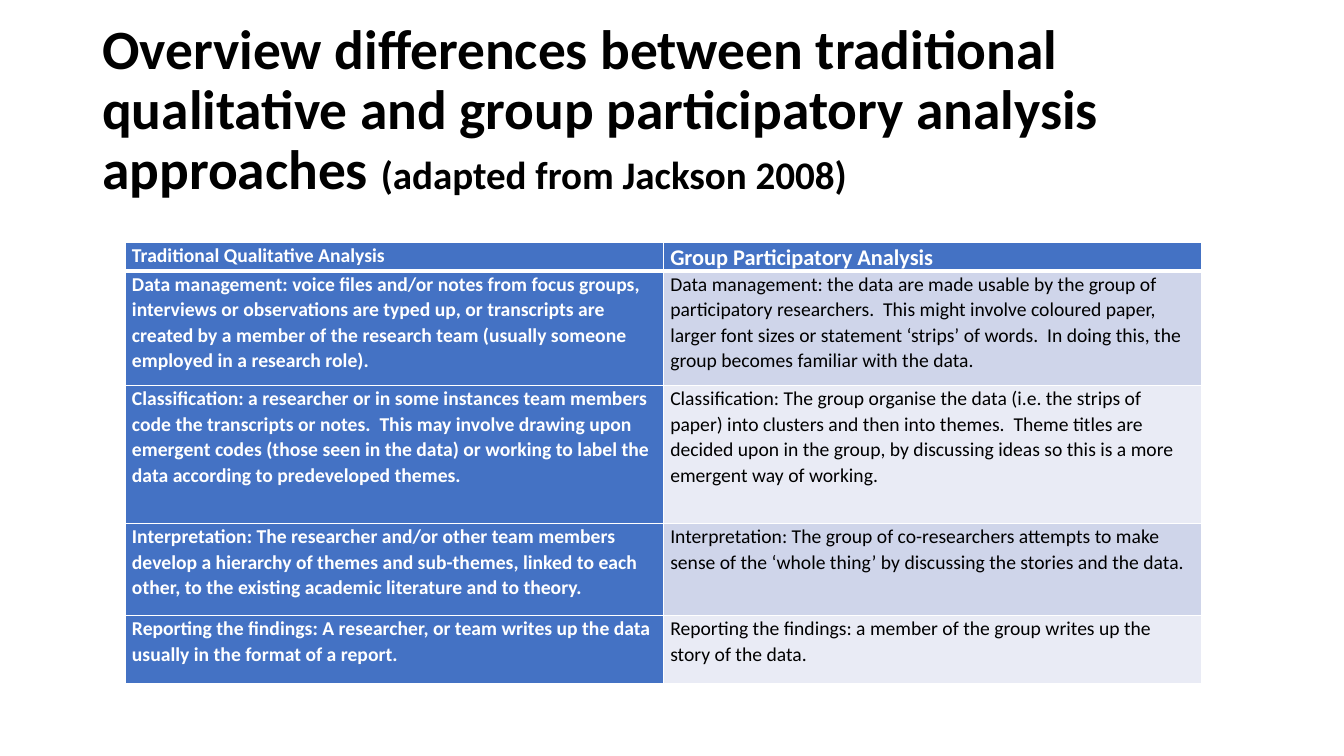
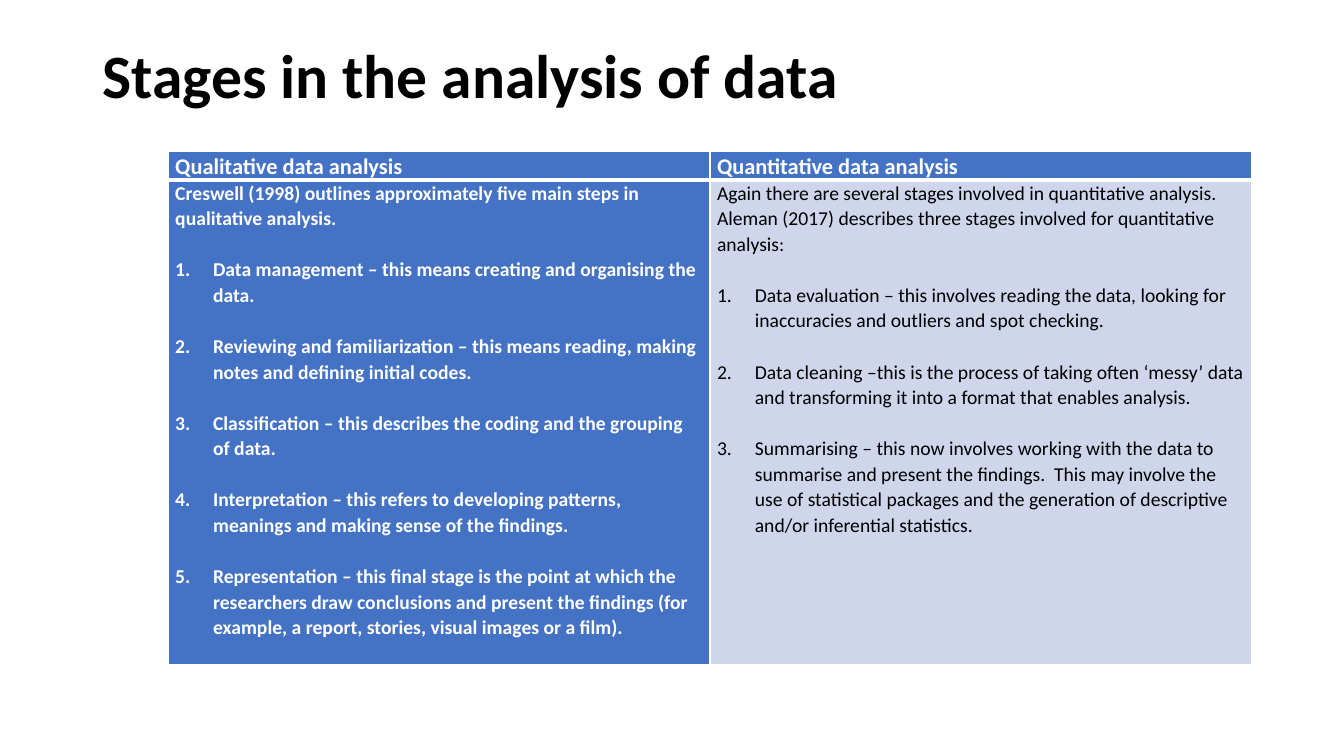
from dataclasses import dataclass

from lxml import etree
from pptx import Presentation
from pptx.dml.color import RGBColor as Rgb
from pptx.enum import text
from pptx.oxml.ns import qn
from pptx.util import Pt


@dataclass(frozen=True)
class Theme:
    font: str = "Calibri"
    black: str = "000000"
    white: str = "FFFFFF"
    blue: str = "4472C4"
    bands: tuple = ("CFD5EA", "E9EBF5")
    title: float = 44
    long: float = 39.6
    cite: float = 27.9
    head: float = 16
    body: float = 14


T = Theme()


def write(par, words, size, color, bold):
    run = par.add_run()
    run.text = words
    look = {"name": T.font, "size": Pt(size), "bold": bold}
    for key, value in look.items():
        setattr(run.font, key, value)
    run.font.color.rgb = Rgb.from_string(color)


def edge(cell, tag, width):
    """Draw one white border of a cell; call before the cell is filled."""
    props = cell._tc.get_or_add_tcPr()
    line = etree.SubElement(props, qn(f"a:{tag}"), w=str(Pt(width)))
    fill = etree.SubElement(line, qn("a:solidFill"))
    etree.SubElement(fill, qn("a:srgbClr"), val=T.white)


# A cell is a list: its opening text, then any numbered steps.
pages = [
    {
        "title": [
            ("Overview differences between traditional qualitative and group "
             "participatory analysis approaches ", T.long),
            ("(adapted from Jackson 2008)", T.cite),
        ],
        "top": 12, "height": 138,
        "table": (89.3, 172.8), "col": 384.5,
        "rows": [20, 82, 98.6, 65.6, 48.6],
        "heads": [T.body, T.head],
        "cells": [
            (["Traditional Qualitative Analysis"], ["Group Participatory Analysis"]),
            (["Data management: voice files and/or notes from focus groups, "
              "interviews or observations are typed up, or transcripts are created "
              "by a member of the research team (usually someone employed in a "
              "research role)."],
             ["Data management: the data are made usable by the group of "
              "participatory researchers.  This might involve coloured paper, "
              "larger font sizes or statement ‘strips’ of words.  In doing this, "
              "the group becomes familiar with the data."]),
            (["Classification: a researcher or in some instances team members code "
              "the transcripts or notes.  This may involve drawing upon emergent "
              "codes (those seen in the data) or working to label the data "
              "according to predeveloped themes."],
             ["Classification: The group organise the data (i.e. the strips of "
              "paper) into clusters and then into themes.  Theme titles are decided "
              "upon in the group, by discussing ideas so this is a more emergent "
              "way of working."]),
            (["Interpretation: The researcher and/or other team members develop a "
              "hierarchy of themes and sub-themes, linked to each other, to the "
              "existing academic literature and to theory."],
             ["Interpretation: The group of co-researchers attempts to make sense "
              "of the ‘whole thing’ by discussing the stories and the data."]),
            (["Reporting the findings: A researcher, or team writes up the data "
              "usually in the format of a report."],
             ["Reporting the findings: a member of the group writes up the story "
              "of the data."]),
        ],
    },
    {
        "title": [("Stages in the analysis of data", T.title)],
        "top": 28.8, "height": 104.4 - 28.8,
        "table": (120.2, 108), "col": 387,
        "rows": [20, 346],
        "heads": [T.head, T.head],
        "cells": [
            (["Qualitative data analysis"], ["Quantitative data analysis"]),
            (["Creswell (1998) outlines approximately five main steps in "
              "qualitative analysis.",
              "Data management – this means creating and organising the data.",
              "Reviewing and familiarization – this means reading, making notes "
              "and defining initial codes.",
              "Classification – this describes the coding and the grouping of data.",
              "Interpretation – this refers to developing patterns, meanings and "
              "making sense of the findings.",
              "Representation – this final stage is the point at which the "
              "researchers draw conclusions and present the findings (for example, "
              "a report, stories, visual images or a film)."],
             ["Again there are several stages involved in quantitative analysis.  "
              "Aleman (2017) describes three stages involved for quantitative "
              "analysis:",
              "Data evaluation – this involves reading the data, looking for "
              "inaccuracies and outliers and spot checking.",
              "Data cleaning –this is the process of taking often ‘messy’ data and "
              "transforming it into a format that enables analysis.",
              "Summarising – this now involves working with the data to summarise "
              "and present the findings.  This may involve the use of statistical "
              "packages and the generation of descriptive and/or inferential "
              "statistics."]),
        ],
    },
]

deck = Presentation()
deck.slide_width, deck.slide_height = Pt(960), Pt(540)

for page in pages:
    slide = deck.slides.add_slide(deck.slide_layouts[6])

    box = slide.shapes.add_textbox(Pt(66), Pt(page["top"]), Pt(828), Pt(page["height"]))
    frame = box.text_frame
    layout = {"word_wrap": True, "vertical_anchor": text.MSO_ANCHOR.TOP}
    for key, value in layout.items():
        setattr(frame, key, value)
    par = frame.paragraphs[0]
    par.line_spacing = 0.9
    for words, size in page["title"]:
        write(par, words, size, T.black, True)

    left, top = page["table"]
    rows, col = page["rows"], page["col"]
    table = slide.shapes.add_table(
        len(rows), 2, Pt(left), Pt(top), Pt(2 * col), Pt(sum(rows))).table
    table.first_row = table.horz_banding = False
    for column in table.columns:
        column.width = Pt(col)

    for r, pair in enumerate(page["cells"]):
        table.rows[r].height = Pt(rows[r])
        for c, lines in enumerate(pair):
            cell = table.cell(r, c)
            pads = {"margin_left": 5, "margin_right": 5,
                    "margin_top": 0, "margin_bottom": 0}
            for key, value in pads.items():
                setattr(cell, key, Pt(value))
            rims = {"lnL": 1, "lnR": 1,
                    "lnT": 3 if r == 1 else 1, "lnB": 3 if r == 0 else 1}
            for tag, width in rims.items():
                edge(cell, tag, width)

            strong = r == 0 or c == 0
            cell.fill.solid()
            shade = T.blue if strong else T.bands[(r - 1) % 2]
            cell.fill.fore_color.rgb = Rgb.from_string(shade)
            size = page["heads"][c] if r == 0 else T.body

            for n, words in enumerate(lines):
                par = cell.text_frame.add_paragraph() if n else cell.text_frame.paragraphs[0]
                par.line_spacing = 1.07
                if n:
                    par.space_before = Pt(18.3)
                    props = par._p.get_or_add_pPr()
                    props.set("marL", str(Pt(27)))
                    props.set("indent", str(-Pt(27)))
                    etree.SubElement(props, qn("a:buAutoNum"), type="arabicPeriod")
                write(par, words, size, T.white if strong else T.black, strong)

deck.save("out.pptx")
